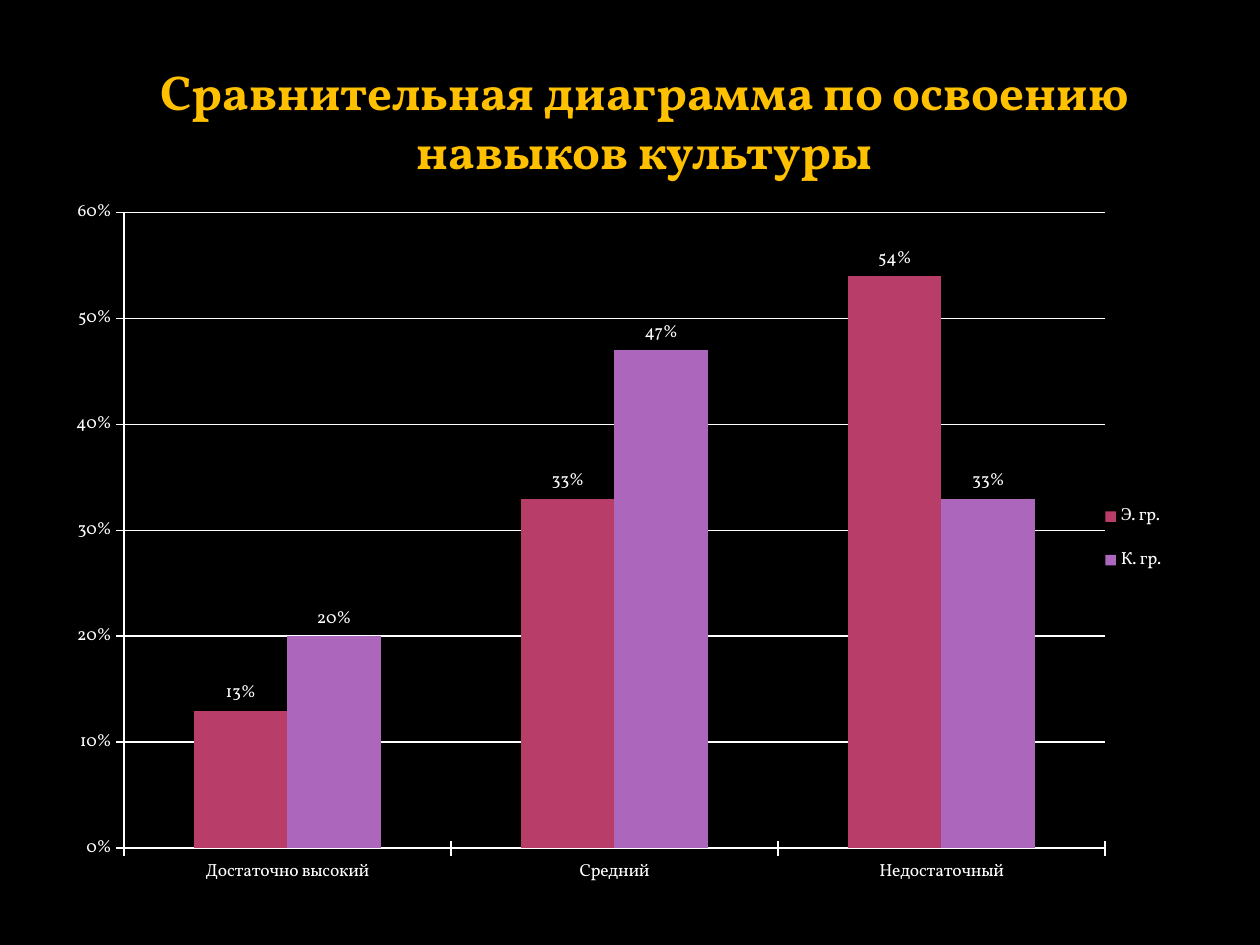
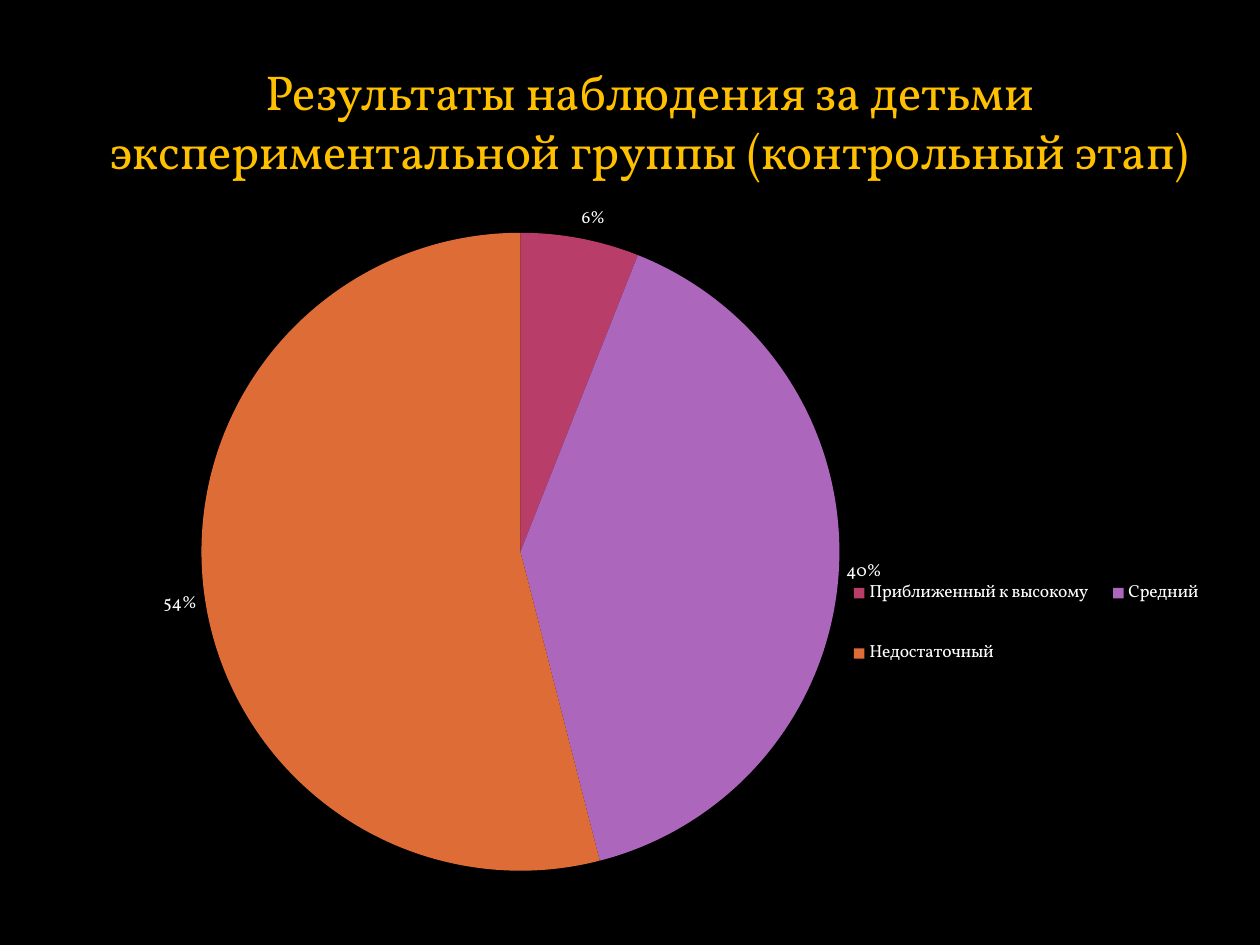
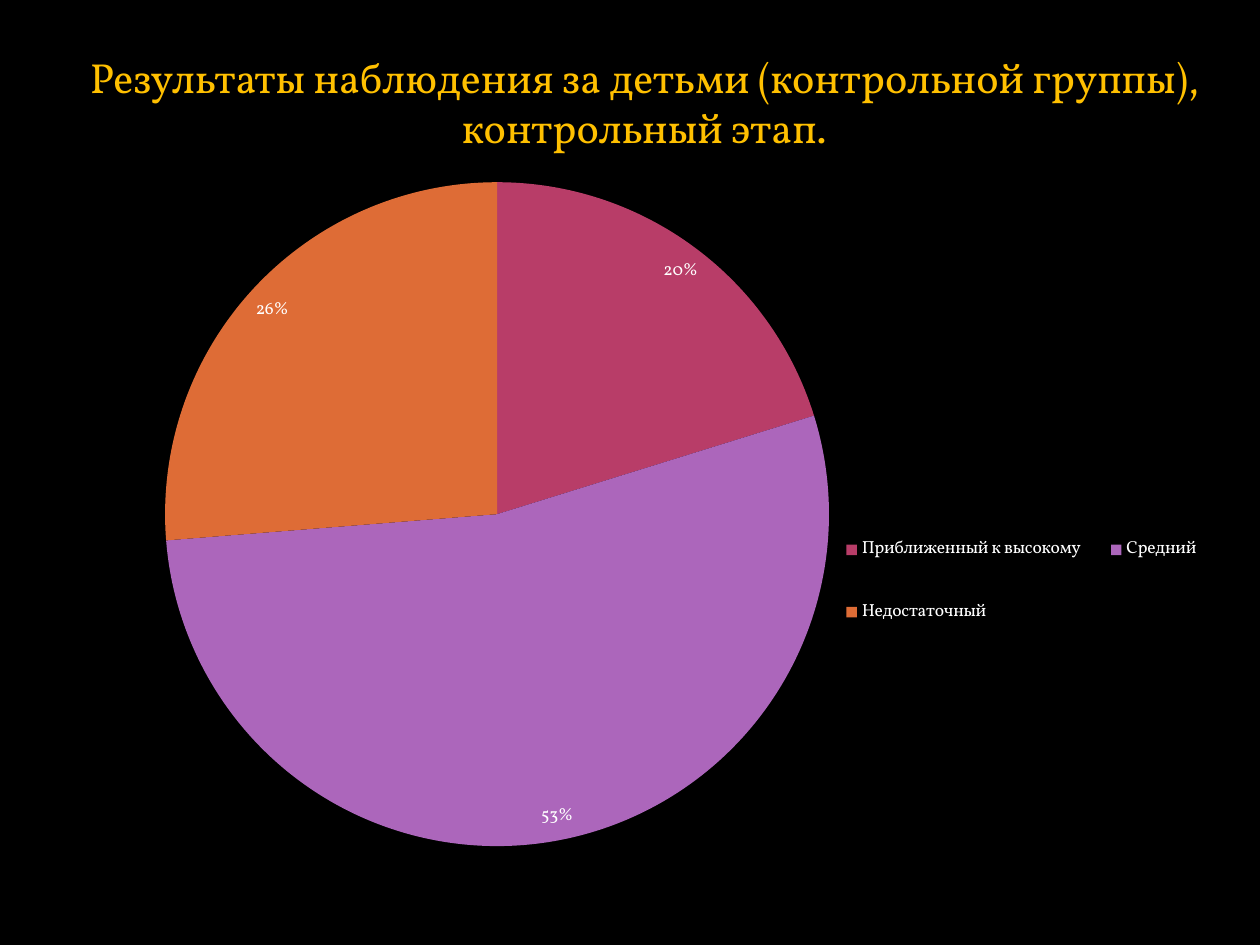
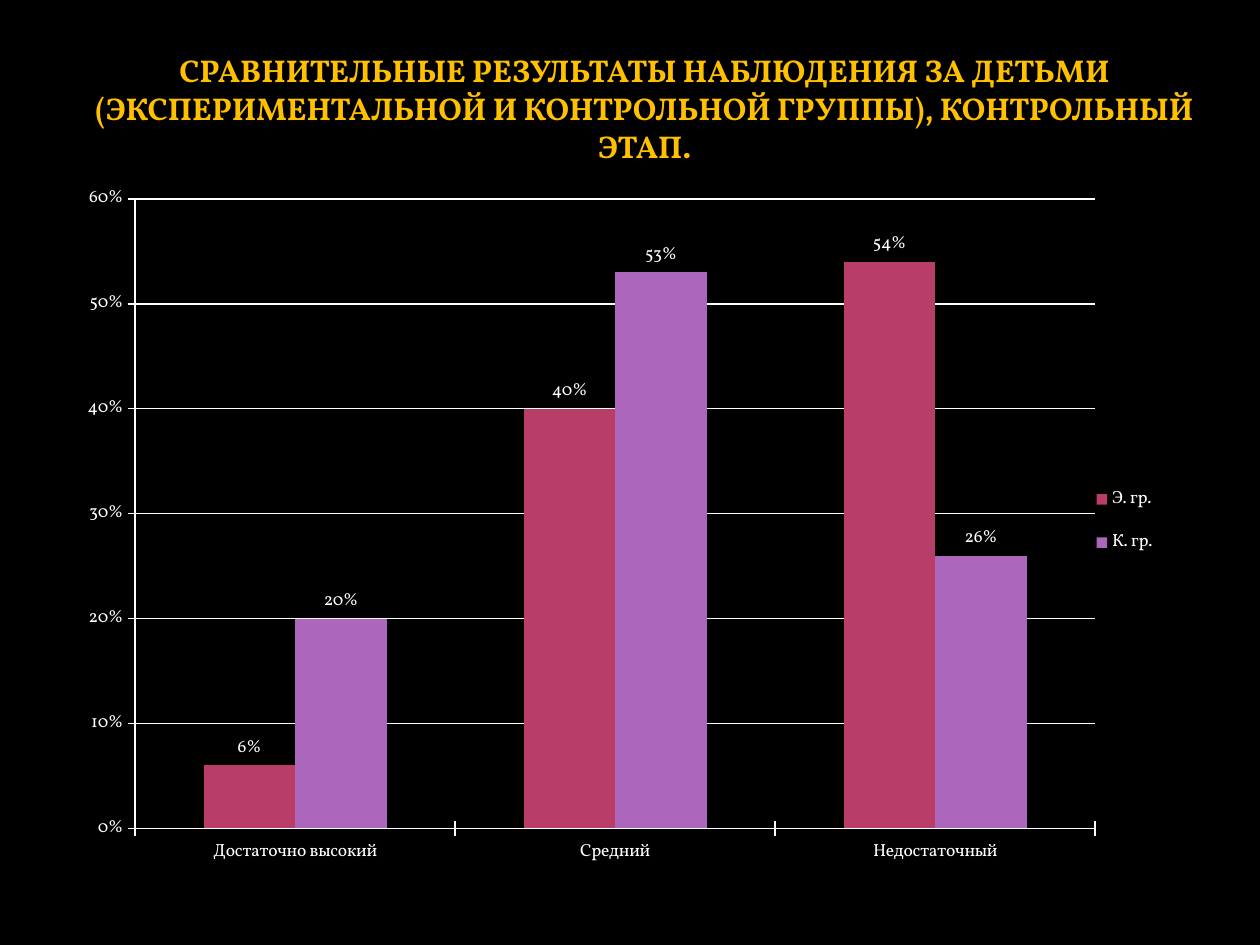
from lxml import etree
from pptx import Presentation
from pptx.chart.data import CategoryChartData
from pptx.dml.color import RGBColor
from pptx.enum.chart import XL_CHART_TYPE, XL_LABEL_POSITION, XL_LEGEND_POSITION, XL_TICK_MARK
from pptx.enum.text import MSO_ANCHOR, PP_ALIGN
from pptx.oxml.ns import qn
from pptx.util import Cm, Pt

COLUMNS = XL_CHART_TYPE.COLUMN_CLUSTERED
PIE = XL_CHART_TYPE.PIE
LABEL_OUTSIDE = XL_LABEL_POSITION.OUTSIDE_END
LABEL_BEST_FIT = XL_LABEL_POSITION.BEST_FIT
LEGEND_RIGHT = XL_LEGEND_POSITION.RIGHT
TICK_CROSS = XL_TICK_MARK.CROSS
ANCHOR_TOP = MSO_ANCHOR.TOP
CENTER = PP_ALIGN.CENTER

FONT = "Vollkorn"
BLACK = "000000"
WHITE = "FFFFFF"
GOLD = "FFC000"
PALETTE = ["B83D68", "AC66BB", "DE6C36"]
PERCENT = "0%"

GROUPS = ["Э. гр.", "К. гр."]
COLUMN_LEVELS = ["Достаточно высокий", "Средний", "Недостаточный"]
PIE_LEVELS = ["Приближенный к высокому", "Средний", "Недостаточный"]
COLUMN_LEGEND = (90, 41.8, 7.4, 15)


def color(hex_text):
    return RGBColor.from_string(hex_text)


def fill_solid(target, hex_text):
    target.fill.solid()
    target.fill.fore_color.rgb = color(hex_text)


def style_font(font, size, hex_text, bold=False):
    font.name = FONT
    font.size = Pt(size)
    font.bold = bold
    font.color.rgb = color(hex_text)


def add_page(deck):
    page = deck.slides.add_slide(deck.slide_layouts[6])
    fill_solid(page.background, BLACK)
    return page


def add_title(page, box, text, size, bold=False):
    frame = page.shapes.add_textbox(*map(Cm, box)).text_frame
    frame.word_wrap = True
    frame.vertical_anchor = ANCHOR_TOP
    para = frame.paragraphs[0]
    para.alignment = CENTER
    span = para.add_run()
    span.text = text
    style_font(span.font, size, GOLD, bold)


def manual_layout(percents, inner=False):
    layout = etree.Element(qn("c:layout"))
    manual = etree.SubElement(layout, qn("c:manualLayout"))
    settings = [("layoutTarget", "inner")] if inner else []
    settings += [("xMode", "edge"), ("yMode", "edge")]
    settings += [(name, str(percent / 100)) for name, percent in zip("xywh", percents)]
    for name, value in settings:
        etree.SubElement(manual, qn(f"c:{name}")).set("val", value)
    return layout


def place_plot(chart, percents):
    area = chart._chartSpace.chart.plotArea
    for layout in area.findall(qn("c:layout")):
        area.remove(layout)
    area.insert(0, manual_layout(percents, inner=True))


def add_legend(chart, percents):
    chart.has_legend = True
    legend = chart.legend
    legend.position = LEGEND_RIGHT
    legend.include_in_layout = False
    style_font(legend.font, 10, WHITE)
    element = legend._element
    for layout in element.findall(qn("c:layout")):
        element.remove(layout)
    element.find(qn("c:legendPos")).addnext(manual_layout(percents))


def add_labels(series, position):
    labels = series.data_labels
    labels.show_value = True
    labels.number_format = PERCENT
    labels.number_format_is_linked = False
    labels.position = position
    style_font(labels.font, 10, WHITE)


def add_chart(page, box, kind, categories, named_values, plot_box, legend_box):
    data = CategoryChartData(number_format=PERCENT)
    data.categories = categories
    for name, values in named_values:
        data.add_series(name, values)
    chart = page.shapes.add_chart(kind, *map(Cm, box), data).chart
    chart.has_title = False
    style_font(chart.font, 10, WHITE)
    place_plot(chart, plot_box)
    add_legend(chart, legend_box)
    return chart


def style_line(line):
    line.color.rgb = color(WHITE)
    line.width = Pt(1)


def add_column_chart(page, box, values, plot_box):
    chart = add_chart(page, box, COLUMNS, COLUMN_LEVELS, zip(GROUPS, values),
                      plot_box, COLUMN_LEGEND)
    plot = chart.plots[0]
    plot.vary_by_categories = False
    plot.gap_width = 150
    for series, hex_text in zip(plot.series, PALETTE):
        fill_solid(series.format, hex_text)
        add_labels(series, LABEL_OUTSIDE)
    for axis in (chart.category_axis, chart.value_axis):
        axis.major_tick_mark = TICK_CROSS
        style_line(axis.format.line)
        style_font(axis.tick_labels.font, 10, WHITE)
    scale = chart.value_axis
    scale.minimum_scale = 0
    scale.maximum_scale = 0.6
    scale.major_unit = 0.1
    scale.tick_labels.number_format = PERCENT
    scale.tick_labels.number_format_is_linked = False
    scale.has_major_gridlines = True
    style_line(scale.major_gridlines.format.line)


def add_pie_chart(page, box, values, plot_box, legend_box, label_position):
    chart = add_chart(page, box, PIE, PIE_LEVELS, [("Series 1", values)],
                      plot_box, legend_box)
    plot = chart.plots[0]
    plot.vary_by_categories = True
    series = plot.series[0]
    for index, hex_text in enumerate(PALETTE):
        fill_solid(series.points[index].format, hex_text)
    add_labels(series, label_position)


def main():
    deck = Presentation()
    deck.slide_width = Cm(25.4)
    deck.slide_height = Cm(19.05)

    page = add_page(deck)
    add_title(page, (1.09, 1.12, 23.8, 2.64),
              "Сравнительная диаграмма по освоению навыков культуры", 28, bold=True)
    add_column_chart(page, (1.09, 3.78, 23.22, 14.35),
                     [(0.13, 0.33, 0.54), (0.2, 0.47, 0.33)],
                     (6.05, 3.55, 85.2, 89.3))

    page = add_page(deck)
    add_title(page, (1.3, 1.12, 23.6, 2.64),
              "Результаты наблюдения за детьми экспериментальной группы (контрольный этап)", 28)
    add_pie_chart(page, (1.3, 3.78, 23.6, 14.15), (0.06, 0.4, 0.54),
                  (11.7, 6.45, 54.5, 90.9), (65.8, 50.9, 32.7, 22.4), LABEL_OUTSIDE)

    page = add_page(deck)
    add_title(page, (1.09, 0.91, 23.8, 3.33),
              "Результаты наблюдения за детьми (контрольной группы), контрольный этап.", 24)
    add_pie_chart(page, (0.3, 3.33, 24.61, 14.66), (0.2, 0.53, 0.26),
                  (12.3, 2.35, 54.4, 91.3), (66.1, 46, 32.7, 22.4), LABEL_BEST_FIT)

    page = add_page(deck)
    add_title(page, (0.89, 0.91, 24.21, 2.57),
              "СРАВНИТЕЛЬНЫЕ РЕЗУЛЬТАТЫ НАБЛЮДЕНИЯ ЗА ДЕТЬМИ "
              "(ЭКСПЕРИМЕНТАЛЬНОЙ И КОНТРОЛЬНОЙ ГРУППЫ), КОНТРОЛЬНЫЙ ЭТАП.", 18, bold=True)
    add_column_chart(page, (1.3, 3.48, 22.81, 14.25),
                     [(0.06, 0.4, 0.54), (0.2, 0.53, 0.26)],
                     (6.25, 3.7, 84.85, 89.1))

    deck.save("out.pptx")


if __name__ == "__main__":
    main()
